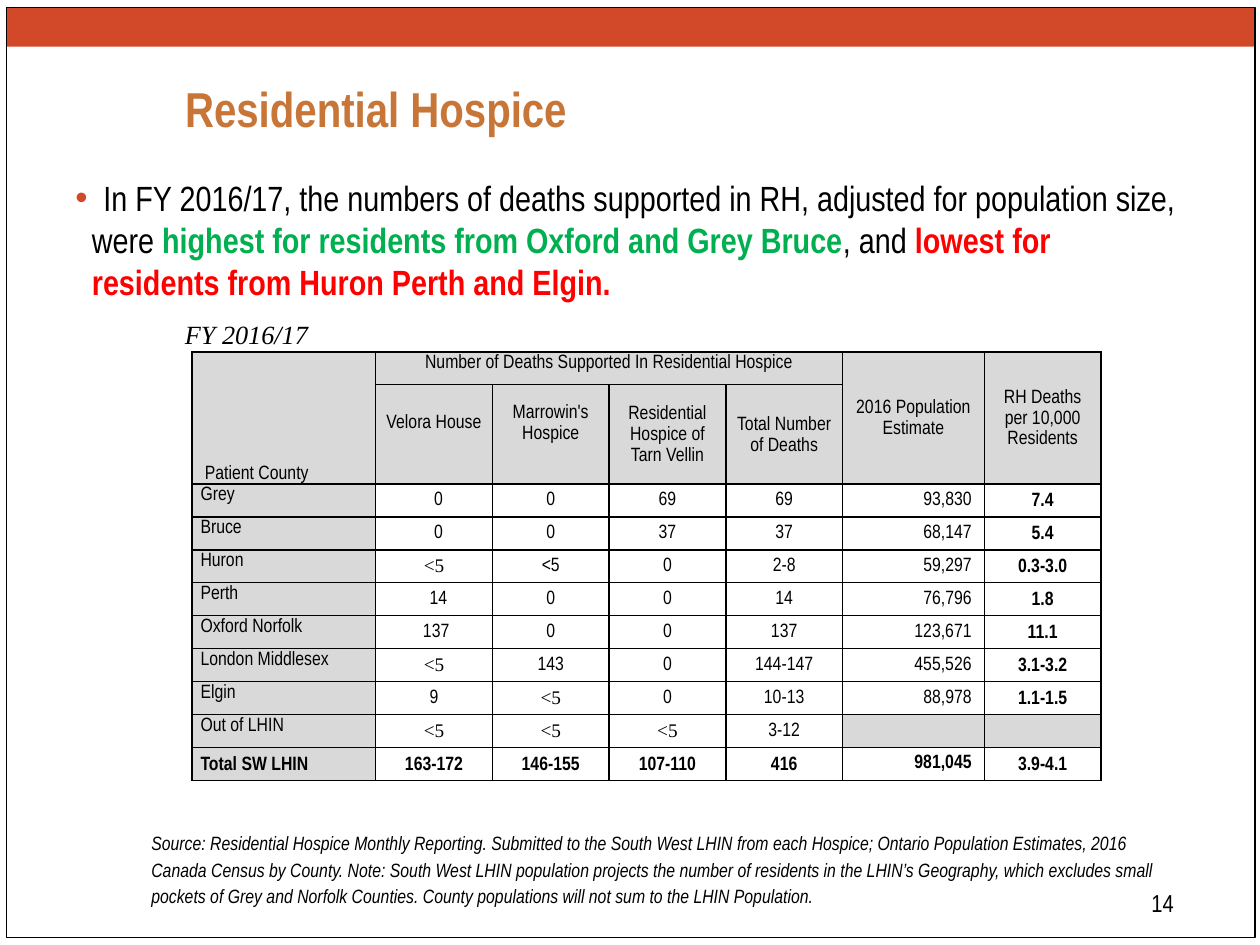
from dataclasses import dataclass
from pptx import Presentation
from pptx.dml.color import RGBColor
from pptx.enum.shapes import MSO_SHAPE
from pptx.enum.text import MSO_ANCHOR, MSO_AUTO_SIZE, PP_ALIGN
from pptx.oxml import parse_xml
from pptx.oxml.ns import nsdecls
from pptx.util import Pt


@dataclass(frozen=True)
class Theme:
    sans: str = "Arial Narrow"
    serif: str = "Times New Roman"
    black: str = "000000"
    band: str = "D2492A"
    title: str = "C87638"
    high: str = "00B050"
    low: str = "FF0000"
    shade: str = "D9D9D9"
    title_size: int = 28
    body_size: int = 20
    period_size: int = 15
    number_size: int = 14
    small_size: int = 11
    loose_spacing: float = 1.15


theme = Theme()

TITLE = "Residential Hospice"
MESSAGE = [
    [("In FY 2016/17, the numbers of deaths supported in RH, adjusted for population size,", theme.black)],
    [("were ", theme.black),
     ("highest for residents from Oxford and Grey Bruce", theme.high),
     (", and ", theme.black),
     ("lowest for", theme.low)],
    [("residents from Huron Perth and Elgin.", theme.low)],
]
PERIOD = "FY 2016/17"
SOURCE = (
    "Source: Residential Hospice Monthly Reporting. Submitted to the South West LHIN from each "
    "Hospice; Ontario Population Estimates, 2016 Canada Census by County. Note: South West LHIN "
    "population projects the number of residents in the LHIN’s Geography, which excludes small "
    "pockets of Grey and Norfolk Counties. County populations will not sum to the LHIN Population."
)
PAGE_NUMBER = "14"
ROWS = [
    ["Patient County", "Number of Deaths Supported In Residential Hospice", "", "", "",
     "2016 Population Estimate", "RH Deaths per 10,000 Residents"],
    ["", "Velora House", "Marrowin's Hospice", "Residential Hospice of Tarn Vellin",
     "Total Number of Deaths", "", ""],
    ["Grey", "0", "0", "69", "69", "93,830", "7.4"],
    ["Bruce", "0", "0", "37", "37", "68,147", "5.4"],
    ["Huron", "<5", "<5", "0", "2-8", "59,297", "0.3-3.0"],
    ["Perth", "14", "0", "0", "14", "76,796", "1.8"],
    ["Oxford Norfolk", "137", "0", "0", "137", "123,671", "11.1"],
    ["London Middlesex", "<5", "143", "0", "144-147", "455,526", "3.1-3.2"],
    ["Elgin", "9", "<5", "0", "10-13", "88,978", "1.1-1.5"],
    ["Out of LHIN", "<5", "<5", "<5", "3-12", "", ""],
    ["Total SW LHIN", "163-172", "146-155", "107-110", "416", "981,045", "3.9-4.1"],
]
HEADER_ROWS = 2
TOTAL_ROW = len(ROWS) - 1
COUNTY, POPULATION, RATE = 0, 5, 6
MERGES = [((0, 0), (1, 0)), ((0, 1), (0, 4)), ((0, 5), (1, 5)), ((0, 6), (1, 6))]
COLUMN_WIDTHS = [105.1] + [66.7] * 4 + [81, 66.7]
ROW_HEIGHTS = [18.85, 56.7] + [18.85] * 9
LEFT_INSETS = {(0, 0): 7.5, (2, 1): 5, (3, 1): 5, (5, 1): 5, (6, 1): 2.5}
BOTTOM_INSETS = {(1, 1): 13.5, (1, 2): 13.5}
SANS_CELLS = {(4, 2)}


def style(span, size, color=theme.black, font=theme.sans, bold=False, italic=False):
    span.font.size = Pt(size)
    span.font.name = font
    span.font.bold = bold
    span.font.italic = italic
    span.font.color.rgb = RGBColor.from_string(color)


def add_text(page, left, top, width, height, text, size, **look):
    box = page.shapes.add_textbox(Pt(left), Pt(top), Pt(width), Pt(height))
    box.text_frame.word_wrap = True
    box.text_frame.text = text
    para = box.text_frame.paragraphs[0]
    for span in para.runs:
        style(span, size, **look)
    return box, para


def add_rectangle(page, left, top, width, height):
    box = page.shapes.add_shape(MSO_SHAPE.RECTANGLE, Pt(left), Pt(top), Pt(width), Pt(height))
    box.shadow.inherit = False
    return box


def set_indent(para, margin, first=0):
    properties = para._p.get_or_add_pPr()
    properties.set("marL", str(Pt(margin)))
    properties.set("indent", str(Pt(first)))
    return properties


def add_bullet(properties):
    for markup in (f'<a:buClr {nsdecls("a")}><a:srgbClr val="{theme.band}"/></a:buClr>',
                   f'<a:buFont {nsdecls("a")} typeface="Arial"/>',
                   f'<a:buChar {nsdecls("a")} char="•"/>'):
        properties.append(parse_xml(markup))


def add_message(page):
    box, _ = add_text(page, 36, 97.2, 666, 95, "", theme.body_size)
    frame = box.text_frame
    for index, parts in enumerate(MESSAGE):
        para = frame.add_paragraph() if index else frame.paragraphs[0]
        if index:
            set_indent(para, 9.4)
        else:
            add_bullet(set_indent(para, 16, -16))
        for text, color in parts:
            span = para.add_run()
            span.text = text
            style(span, theme.body_size, color, bold=color != theme.black)


def set_borders(cell):
    properties = cell._tc.get_or_add_tcPr()
    for side in ("lnL", "lnR", "lnT", "lnB"):
        properties.append(parse_xml(
            f'<a:{side} {nsdecls("a")} w="{Pt(1)}"><a:solidFill>'
            f'<a:srgbClr val="{theme.black}"/></a:solidFill></a:{side}>'))


def cell_layout(row, column):
    header = row < HEADER_ROWS
    if column == COUNTY:
        anchor = MSO_ANCHOR.BOTTOM if header else MSO_ANCHOR.TOP
        return PP_ALIGN.LEFT, MSO_ANCHOR.MIDDLE if row == TOTAL_ROW else anchor
    if column == POPULATION and not header:
        return PP_ALIGN.RIGHT, MSO_ANCHOR.MIDDLE
    return PP_ALIGN.CENTER, MSO_ANCHOR.TOP if (row, column) == (0, 1) else MSO_ANCHOR.MIDDLE


def format_cell(cell, row, column, text):
    place = (row, column)
    header = row < HEADER_ROWS
    total = row == TOTAL_ROW
    side = 5 if header or column in (COUNTY, RATE) else 0
    cell.margin_left = Pt(LEFT_INSETS.get(place, side))
    cell.margin_right = Pt(7.2 if column == POPULATION and not header else side)
    cell.margin_top = 0
    cell.margin_bottom = Pt(BOTTOM_INSETS.get(place, 0))
    set_borders(cell)
    if header or column == COUNTY or not text:
        cell.fill.solid()
        cell.fill.fore_color.rgb = RGBColor.from_string(theme.shade)
    else:
        cell.fill.background()
    cell.text_frame.text = text
    para = cell.text_frame.paragraphs[0]
    para.alignment, cell.vertical_anchor = cell_layout(row, column)
    if header or column in (COUNTY, RATE) or (total and column != POPULATION):
        para.line_spacing = theme.loose_spacing
    serif = text == "<5" and place not in SANS_CELLS
    bold = total or (column == RATE and not header)
    for span in para.runs:
        style(span, theme.small_size, font=theme.serif if serif else theme.sans, bold=bold)
    if not text:
        para._p.append(parse_xml(f'<a:endParaRPr {nsdecls("a")} sz="{theme.small_size * 100}"/>'))


def add_deaths_table(page):
    table = page.shapes.add_table(
        len(ROWS), len(COLUMN_WIDTHS), Pt(109.6), Pt(201),
        Pt(sum(COLUMN_WIDTHS)), Pt(sum(ROW_HEIGHTS))).table
    table.first_row = False
    table.horz_banding = False
    for column, width in zip(table.columns, COLUMN_WIDTHS):
        column.width = Pt(width)
    for line, height in zip(table.rows, ROW_HEIGHTS):
        line.height = Pt(height)
    for row, values in enumerate(ROWS):
        for column, text in enumerate(values):
            format_cell(table.cell(row, column), row, column, text)
    for first, last in MERGES:
        table.cell(*first).merge(table.cell(*last))


def set_title(page):
    title = page.shapes.title
    title.left, title.top, title.width, title.height = Pt(98.6), Pt(41.4), Pt(485), Pt(72)
    title.text_frame.text = TITLE
    title.text_frame.auto_size = MSO_AUTO_SIZE.NONE
    title.text_frame.vertical_anchor = MSO_ANCHOR.TOP
    para = title.text_frame.paragraphs[0]
    para.alignment = PP_ALIGN.LEFT
    style(para.runs[0], theme.title_size, theme.title, bold=True)


def main():
    deck = Presentation()
    deck.slide_width, deck.slide_height = Pt(720), Pt(540)
    page = deck.slides.add_slide(deck.slide_layouts[5])
    band = add_rectangle(page, 3.6, 4.3, 713.5, 22.3)
    band.fill.solid()
    band.fill.fore_color.rgb = RGBColor.from_string(theme.band)
    band.line.fill.background()
    frame = add_rectangle(page, 3.6, 4.3, 713.5, 531.4)
    frame.fill.background()
    frame.line.color.rgb = RGBColor.from_string(theme.black)
    frame.line.width = Pt(0.75)
    set_title(page)
    add_deaths_table(page)
    add_message(page)
    add_text(page, 98.6, 178.2, 103.7, 25.2, PERIOD, theme.period_size,
             font=theme.serif, italic=True)
    _, note = add_text(page, 70, 469.6, 598.3, 53.3, SOURCE, theme.small_size, italic=True)
    set_indent(note, 9.4)
    note.line_spacing = theme.loose_spacing
    _, number = add_text(page, 528, 504, 149.8, 36, PAGE_NUMBER, theme.number_size)
    number.alignment = PP_ALIGN.RIGHT
    deck.save("out.pptx")


if __name__ == "__main__":
    main()
